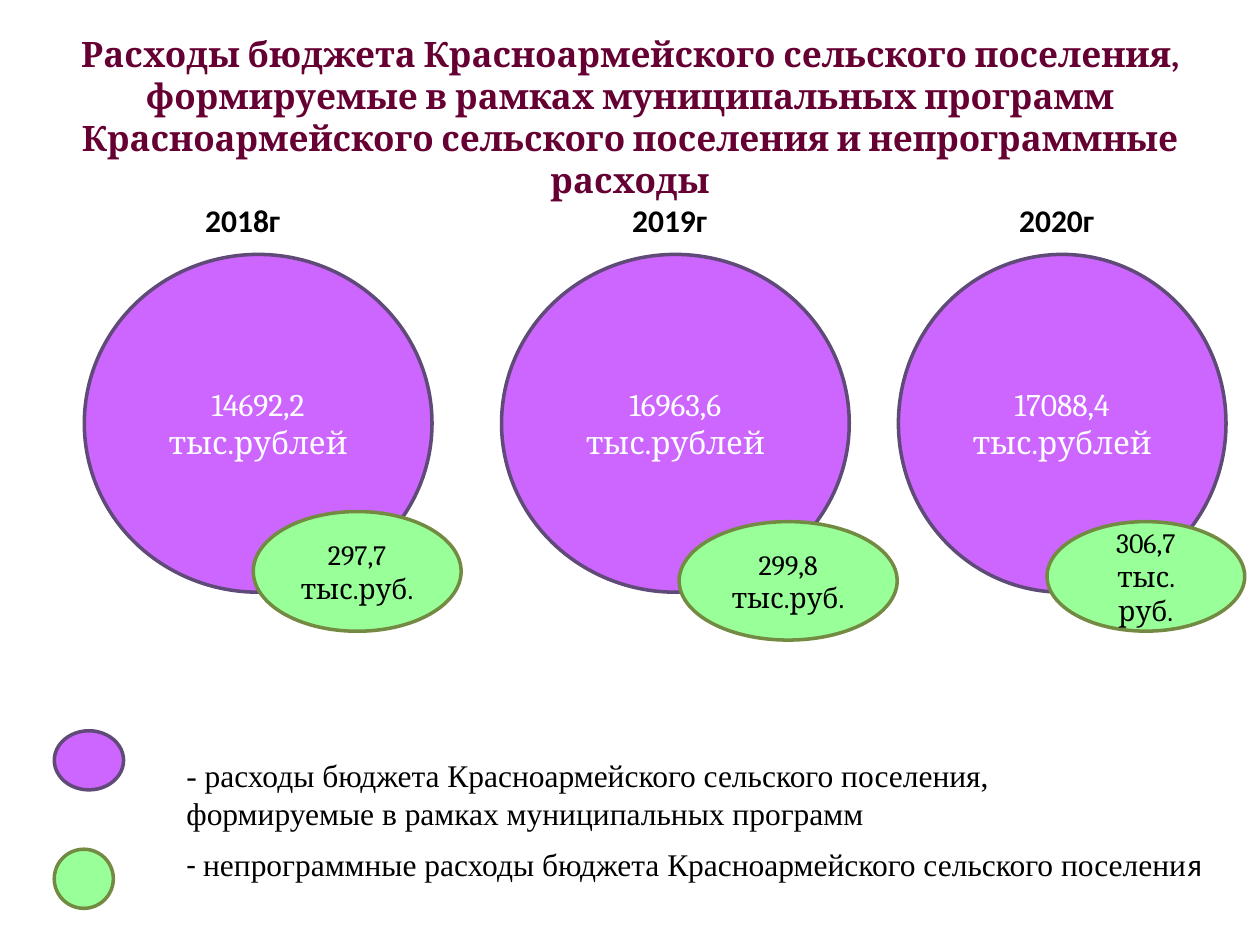
"""Build a slide comparing programme and non-programme budget spending by year."""
from pptx import Presentation
from pptx.dml.color import RGBColor
from pptx.enum.shapes import MSO_SHAPE
from pptx.enum.text import MSO_ANCHOR, MSO_AUTO_SIZE, PP_ALIGN
from pptx.util import Pt

OVAL = MSO_SHAPE.OVAL
MIDDLE = MSO_ANCHOR.MIDDLE
NO_FIT, GROW = MSO_AUTO_SIZE.NONE, MSO_AUTO_SIZE.SHAPE_TO_FIT_TEXT
CENTER = PP_ALIGN.CENTER

COLORS = {
    "title": "660033",
    "programme": "CC66FF",
    "programme_line": "5F4A78",
    "other": "99FF99",
    "other_line": "738A42",
    "white": "FFFFFF",
    "black": "000000",
}


def style_font(font, name, size, color, bold=False):
    font.name, font.size, font.bold = name, Pt(size), bold
    font.color.rgb = RGBColor.from_string(COLORS[color])


def add_oval(box, kind, text="", size=18, color="white"):
    oval = slide.shapes.add_shape(OVAL, *map(Pt, box))
    oval.shadow.inherit = False
    oval.fill.solid()
    oval.fill.fore_color.rgb = RGBColor.from_string(COLORS[kind])
    oval.line.color.rgb = RGBColor.from_string(COLORS[kind + "_line"])
    oval.line.width = Pt(2)
    if text:
        oval.text_frame.text = text
        oval.text_frame.vertical_anchor = MIDDLE
        amount = oval.text_frame.paragraphs[0]
        amount.alignment = CENTER
        style_font(amount.font, "Cambria", size, color)


prs = Presentation()
prs.slide_width, prs.slide_height = Pt(720), Pt(540)
slide = prs.slides.add_slide(prs.slide_layouts[5])

title = slide.shapes.title
title.left, title.top, title.width, title.height = Pt(36), Pt(21.6), Pt(648), Pt(90)
title.text_frame.text = (
    "Расходы бюджета Красноармейского сельского поселения, формируемые в рамках "
    "муниципальных программ Красноармейского сельского поселения и непрограммные расходы"
)
title.text_frame.auto_size = NO_FIT
title.text_frame.vertical_anchor = MIDDLE
heading = title.text_frame.paragraphs[0]
heading.alignment = CENTER
style_font(heading.font, "Cambria", 20, "title", bold=True)

years = [
    ("2018г", 110.2, 64, "14692,2 тыс.рублей", 48.2, 198.7,
     "297,7 тыс.руб.", (144.7, 292.3, 118.8, 68.4)),
    ("2019г", 354.2, 67.7, "16963,6 тыс.рублей", 286.6, 198.7,
     "299,8 тыс.руб.", (388.1, 298.1, 124.6, 67.7)),
    ("2020г", 575.3, 65.5, "17088,4 тыс.рублей", 513.4, 187.2,
     "306,7 тыс. руб.", (598.3, 298.1, 113, 62.6)),
]
for year, year_left, year_width, programme, left, width, other, other_box in years:
    add_oval((left, 145.4, width, 193), "programme", programme)
    add_oval(other_box, "other", other, 16, "black")
    year_label = slide.shapes.add_textbox(Pt(year_left), Pt(111.6), Pt(year_width), Pt(28.8))
    year_label.text_frame.text = year
    year_label.text_frame.word_wrap = True
    year_label.text_frame.auto_size = GROW
    style_font(year_label.text_frame.paragraphs[0].font, "Calibri", 18, "black", bold=True)

legend = [
    ("programme", (31, 417.6, 39.6, 33.8), (99.4, 428.4, 572.4, 51.1), [
        ("- расходы бюджета Красноармейского сельского поселения, "
         "формируемые в рамках муниципальных программ", "Times New Roman"),
    ]),
    ("other", (31, 485.3, 33.8, 33.8), (99.4, 479.5, 612.7, 28.8), [
        ("- ", "Calibri"),
        ("непрограммные расходы бюджета Красноармейского сельского поселени",
         "Times New Roman"),
        ("я", "Calibri"),
    ]),
]
for kind, marker_box, label_box, parts in legend:
    add_oval(marker_box, kind)
    label = slide.shapes.add_textbox(*map(Pt, label_box))
    label.text_frame.word_wrap = True
    label.text_frame.auto_size = GROW
    for text, font_name in parts:
        run = label.text_frame.paragraphs[0].add_run()
        run.text = text
        style_font(run.font, font_name, 18, "black")

prs.save("out.pptx")
